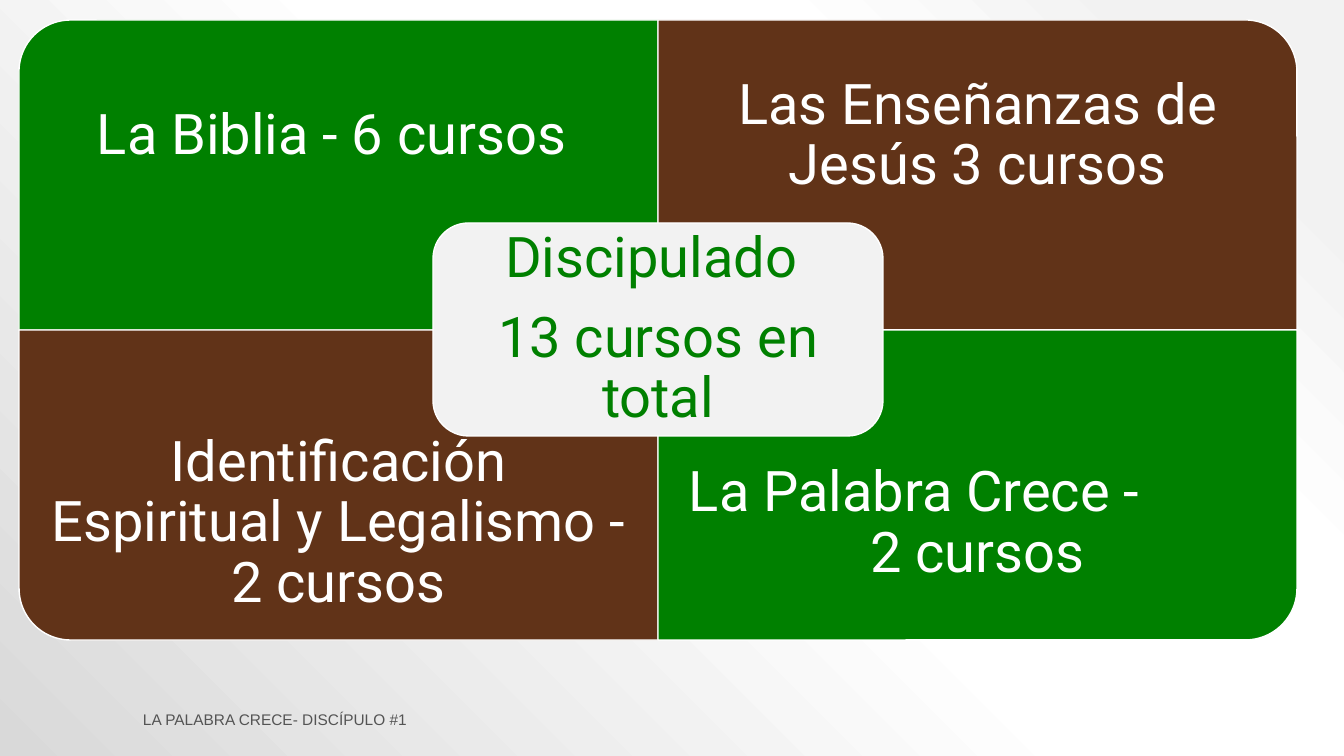
from collections import namedtuple
from pptx import Presentation
from pptx.dml.color import RGBColor
from pptx.enum.shapes import MSO_SHAPE
from pptx.enum.text import MSO_ANCHOR, PP_ALIGN
from pptx.oxml import parse_xml
from pptx.oxml.ns import nsdecls, qn
from pptx.util import Pt

PX = 914400 / 100.8
GREEN, BROWN, WHITE, PALE, GREY = "008000", "613318", "FFFFFF", "F2F2F2", "545454"
BACKGROUND_STOPS = [(10, PALE), (28, WHITE), (48, WHITE), (100, "D9D9D9")]
COURSES = [
    (GREEN, 270, ["La Biblia - 6 cursos "]),
    (BROWN, 0, ["Las Enseñanzas de Jesús 3 cursos"]),
    (BROWN, 180, ["Identificación Espiritual y Legalismo - 2 cursos"]),
    (GREEN, 90, ["La Palabra Crece -", "2 cursos"]),
]
Box = namedtuple("Box", "left top width height")


def px(length):
    return round(length * PX)


def color(value):
    return RGBColor.from_string(value)


def place(box):
    return [px(length) for length in box]


def add_panel(page, preset, box, fill, rotation=0):
    if rotation in (90, 270):
        shift = (box.width - box.height) / 2
        box = Box(box.left + shift, box.top - shift, box.height, box.width)
    panel = page.shapes.add_shape(preset, *place(box))
    panel.rotation = rotation
    panel.shadow.inherit = False
    panel.fill.solid()
    panel.fill.fore_color.rgb = color(fill)
    panel.line.color.rgb = color(WHITE)
    panel.line.width = Pt(1)
    return panel


def add_label(page, box, lines, ink, inset, size=40, font="Roboto", align=PP_ALIGN.CENTER):
    frame = page.shapes.add_textbox(*place(box)).text_frame
    frame.word_wrap = True
    frame.vertical_anchor = MSO_ANCHOR.MIDDLE
    frame.margin_left = frame.margin_right = px(inset)
    frame.margin_top = frame.margin_bottom = px(inset)
    frame.text = "\n".join(lines)
    for para in frame.paragraphs:
        para.alignment = align
        para.line_spacing = 0.9
        para.space_after = Pt(size * 0.35)
        for span in para.runs:
            span.font.size = Pt(size)
            span.font.name = font
            span.font.color.rgb = color(ink)
    return frame


def draw_background(page):
    page.background.fill.gradient()
    old = next(page.element.iter(qn("a:gradFill")))
    stops = "".join(
        f'<a:gs pos="{stop * 1000}"><a:srgbClr val="{shade}"/></a:gs>'
        for stop, shade in BACKGROUND_STOPS
    )
    gradient = parse_xml(
        f'<a:gradFill {nsdecls("a")} rotWithShape="1"><a:gsLst>{stops}</a:gsLst>'
        '<a:path path="circle"><a:fillToRect l="100000" b="100000"/></a:path></a:gradFill>'
    )
    old.getparent().replace(old, gradient)


def draw_courses(page, box):
    width, height = box.width / 2, box.height / 2
    label_height = height * 3 / 4
    for index, (fill, rotation, lines) in enumerate(COURSES):
        row, column = divmod(index, 2)
        cell = Box(box.left + column * width, box.top + row * height, width, height)
        add_panel(page, MSO_SHAPE.ROUND_1_RECTANGLE, cell, fill, rotation)
        label_top = cell.top + row * (height - label_height)
        label = Box(cell.left, label_top, width, label_height)
        frame = add_label(page, label, lines, WHITE, 31)
        if len(lines) > 1:
            frame.paragraphs[0].alignment = PP_ALIGN.LEFT
            frame.paragraphs[0].space_after = Pt(0)


def draw_total(page, box):
    add_panel(page, MSO_SHAPE.ROUNDED_RECTANGLE, box, PALE)
    label = Box(box.left + 10, box.top + 10, box.width - 20, box.height - 20)
    add_label(page, label, ["Discipulado ", "13 cursos en total"], GREEN, 17)


def draw_footer(page, box):
    add_label(page, box, ["LA PALABRA CRECE- DISCÍPULO #1"], GREY, 0, 11, "Arial", PP_ALIGN.LEFT)


def main():
    deck = Presentation()
    deck.slide_width, deck.slide_height = px(1344), px(756)
    page = deck.slides.add_slide(deck.slide_layouts[6])
    draw_background(page)
    draw_footer(page, Box(143, 711, 722, 20))
    draw_courses(page, Box(19, 20, 1278, 620))
    draw_total(page, Box(433, 223, 450, 213))
    deck.save("out.pptx")


if __name__ == "__main__":
    main()
